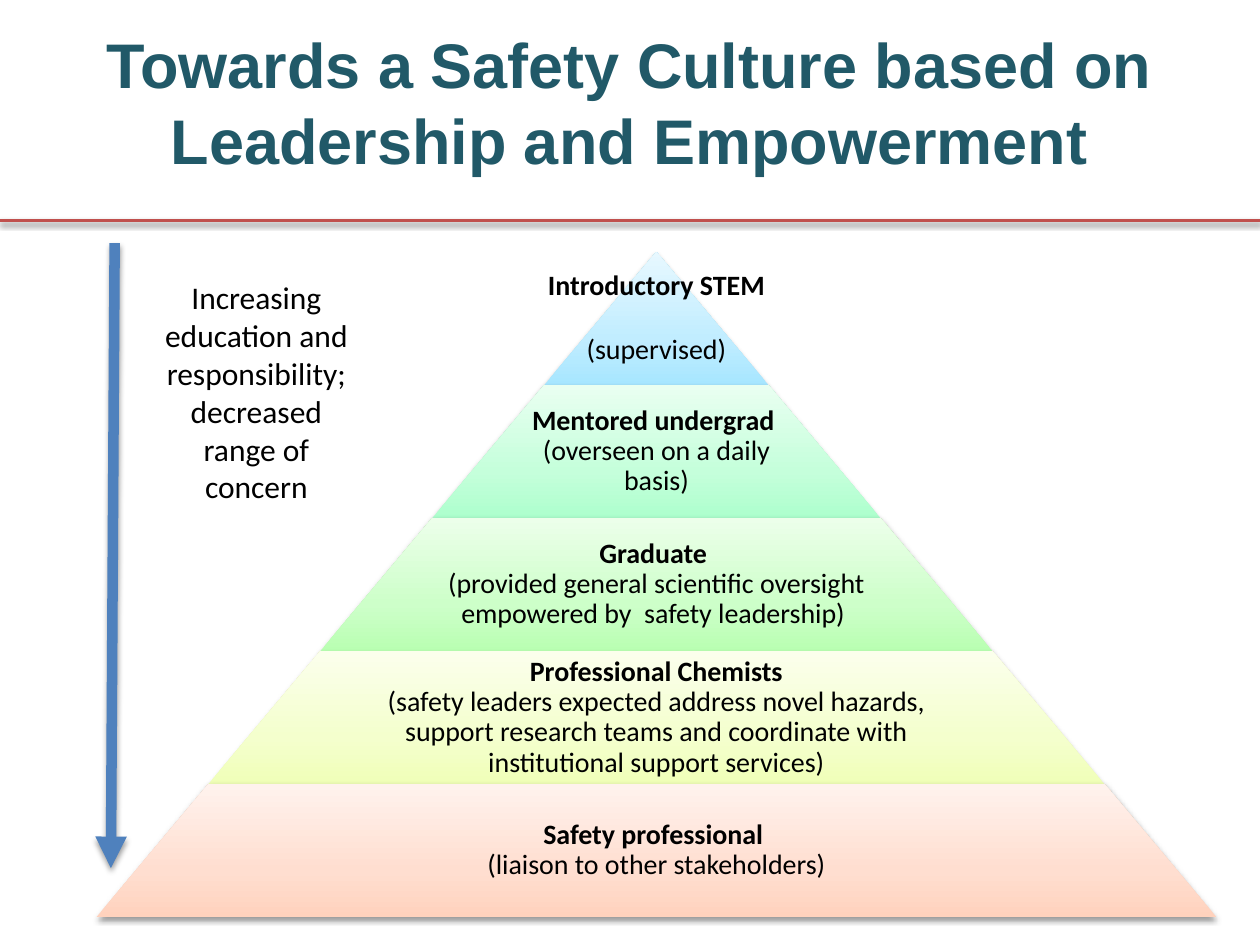
from lxml import etree
from pptx import Presentation
from pptx.dml.color import RGBColor
from pptx.enum.shapes import MSO_CONNECTOR, MSO_SHAPE
from pptx.enum.text import MSO_ANCHOR, PP_ALIGN
from pptx.oxml.ns import qn
from pptx.util import Inches, Pt

CENTER = PP_ALIGN.CENTER
MIDDLE = MSO_ANCHOR.MIDDLE
STRAIGHT = MSO_CONNECTOR.STRAIGHT
TRAPEZOID = MSO_SHAPE.TRAPEZOID

TEAL = RGBColor(0x21, 0x59, 0x68)
RED = RGBColor(0xC0, 0x50, 0x4D)
BLUE = RGBColor(0x4F, 0x81, 0xBD)
BLACK = RGBColor(0, 0, 0)

# Content
TITLE_LINES = ["Towards a Safety Culture based on", "Leadership and Empowerment"]
ARROW_NOTE = "Increasing education and responsibility; decreased range of concern"
# role, explanation, gradient colours from bottom to top
LEVELS = [
    ("Introductory STEM ", "(supervised)", ("A7E6FF", "C1EDFF", "E7F8FF")),
    ("Mentored undergrad ", "(overseen on a daily basis)", ("ADFFCD", "C5FFDB", "E9FFF1")),
    ("Graduate ",
     "(provided general scientific oversight empowered by  safety leadership)\u00a0",
     ("B9FFB2", "CDFFC9", "ECFFEA")),
    ("Professional Chemists",
     "(safety leaders expected address novel hazards, support research teams "
     "and coordinate with institutional support services)",
     ("F0FFB8", "F4FFCD", "FBFFEC")),
    ("Safety professional ", "(liaison to other stakeholders)",
     ("FFD2BD", "FFDED0", "FFF2ED")),
]
GRADIENT_STOPS = (0, 35, 100)

# Pyramid geometry in inches
PYRAMID_CENTER, PYRAMID_TOP, PYRAMID_WIDTH = 5.21, 2.0, 8.89
LEVEL_HEIGHT = 1.056
LEVEL_STEP = PYRAMID_WIDTH / len(LEVELS)
TEXT_SHARE = 0.65
INSET = 0.02


def add_xml(parent, tag, **attributes):
    return etree.SubElement(parent, qn(tag), attributes)


def add_shadow(shape):
    properties = shape._element.spPr
    effects = properties.find(qn("a:effectLst"))
    if effects is None:
        effects = add_xml(properties, "a:effectLst")
    shadow = add_xml(effects, "a:outerShdw", blurRad=str(Pt(3.1)), dist=str(Pt(1.6)),
                     dir="5400000", rotWithShape="0")
    color = add_xml(shadow, "a:srgbClr", val="000000")
    add_xml(color, "a:alpha", val="38000")


def fill_gradient(shape, colors):
    shape.fill.gradient()
    shape.fill.gradient_angle = 90
    stops = shape._element.spPr.find(qn("a:gradFill")).find(qn("a:gsLst"))
    for old_stop in list(stops):
        stops.remove(old_stop)
    for position, color in zip(GRADIENT_STOPS, colors):
        stop = add_xml(stops, "a:gs", pos=str(position * 1000))
        add_xml(stop, "a:srgbClr", val=color)


def add_run(paragraph, text, size, color=BLACK, font="Calibri", bold=False):
    run = paragraph.add_run()
    run.text = text
    run.font.size = Pt(size)
    run.font.name = font
    run.font.bold = bold
    run.font.color.rgb = color


def add_line(shapes, start, end, color, width):
    line = shapes.add_connector(STRAIGHT, *map(Inches, start + end))
    line.line.color.rgb = color
    line.line.width = Pt(width)
    add_shadow(line)
    return line


def add_level(shapes, index, role, explanation, colors):
    top = PYRAMID_TOP + index * LEVEL_HEIGHT
    width = LEVEL_STEP * (index + 1)
    band = shapes.add_shape(TRAPEZOID, Inches(PYRAMID_CENTER - width / 2), Inches(top),
                            Inches(width), Inches(LEVEL_HEIGHT))
    band.adjustments[0] = LEVEL_STEP / 2 / LEVEL_HEIGHT
    fill_gradient(band, colors)
    band.line.fill.background()
    band.shadow.inherit = False
    add_shadow(band)

    # The tip uses its full width for text
    text_width = width * TEXT_SHARE if index else width
    label = shapes.add_textbox(Inches(PYRAMID_CENTER - text_width / 2), Inches(top),
                               Inches(text_width), Inches(LEVEL_HEIGHT))
    frame = label.text_frame
    frame.word_wrap = True
    frame.vertical_anchor = MIDDLE
    frame.margin_left = frame.margin_right = Inches(INSET)
    frame.margin_top = frame.margin_bottom = Inches(INSET)
    paragraph = frame.paragraphs[0]
    paragraph.alignment = CENTER
    paragraph.line_spacing = 0.9
    add_run(paragraph, role, 16, bold=True)
    paragraph.add_line_break()
    add_run(paragraph, explanation, 16)


def main():
    deck = Presentation()
    deck.slide_width, deck.slide_height = Inches(10), Inches(7.5)
    slide = deck.slides.add_slide(deck.slide_layouts[5])
    shapes = slide.shapes

    # Title
    title = shapes.title
    title.left, title.top = Inches(0.13), Inches(0.39)
    title.width, title.height = Inches(9.73), Inches(0.83)
    title.text_frame.vertical_anchor = MIDDLE
    heading = title.text_frame.paragraphs[0]
    heading.alignment = CENTER
    for number, line in enumerate(TITLE_LINES):
        if number:
            heading.add_line_break()
        add_run(heading, line, 36, TEAL, "Arial", True)

    # Rule under the title
    add_line(shapes, (0, 1.75), (10, 1.75), RED, 2)

    # Pyramid
    pyramid = shapes.add_group_shape()
    for index, level in enumerate(LEVELS):
        add_level(pyramid.shapes, index, *level)

    # Downward arrow and its note
    arrow = add_line(shapes, (0.91, 1.93), (0.88, 6.89), BLUE, 6)
    add_xml(arrow.line._get_or_add_ln(), "a:tailEnd", type="triangle")
    note = shapes.add_textbox(Inches(1.16), Inches(2.16), Inches(1.75), Inches(1.92))
    note.text_frame.word_wrap = True
    note_paragraph = note.text_frame.paragraphs[0]
    note_paragraph.alignment = CENTER
    add_run(note_paragraph, ARROW_NOTE, 18)

    deck.save("out.pptx")


if __name__ == "__main__":
    main()
